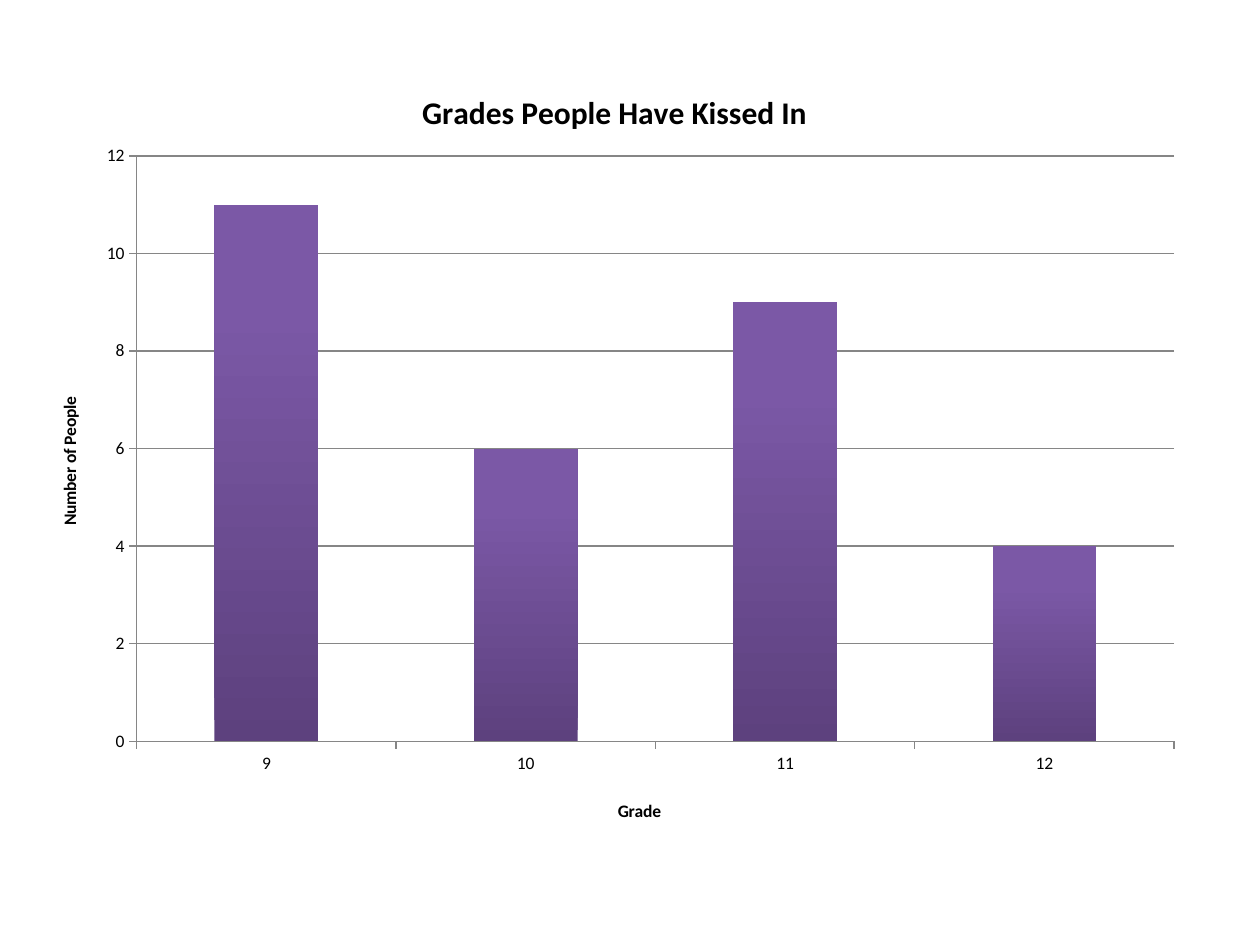
from dataclasses import dataclass
from typing import Any

import lxml.etree
import pptx
import pptx.chart.data
import pptx.dml.color
import pptx.enum.chart
import pptx.oxml.ns
import pptx.util

FONT = "Calibri"
BLACK = "000000"
GREY = "868686"


@dataclass
class Label:
    host: Any
    text: str
    size: int
    x: float
    y: float


def color(code: str) -> pptx.dml.color.RGBColor:
    return pptx.dml.color.RGBColor.from_string(code)


def style(font: Any, size: int, bold: bool = False, code: str = BLACK) -> None:
    font.name = FONT
    font.size = pptx.util.Pt(size)
    font.bold = bold
    font.color.rgb = color(code)


def write(frame: Any, text: str, **form: Any) -> None:
    run = frame.paragraphs[0].add_run()
    run.text = text
    style(run.font, **form)


def place(node: Any, index: int, **spots: Any) -> None:
    qn = pptx.oxml.ns.qn
    for old in node.findall(qn("c:layout")):
        node.remove(old)
    layout = lxml.etree.Element(qn("c:layout"))
    manual = lxml.etree.SubElement(layout, qn("c:manualLayout"))
    for key, value in spots.items():
        lxml.etree.SubElement(manual, qn(f"c:{key}")).set("val", str(value))
    node.insert(index, layout)


def draw_label(label: Label) -> None:
    title = getattr(label.host, "chart_title", None) or label.host.axis_title
    write(title.text_frame, label.text, size=label.size, bold=True)
    place(title._element, 1, xMode="edge", yMode="edge", x=label.x, y=label.y)


def draw_line(line: Any) -> None:
    line.color.rgb = color(GREY)
    line.width = pptx.util.Pt(0.75)


def draw_axis(axis: Any) -> None:
    axis.major_tick_mark = pptx.enum.chart.XL_TICK_MARK.OUTSIDE
    axis.minor_tick_mark = pptx.enum.chart.XL_TICK_MARK.NONE
    style(axis.tick_labels.font, 10)
    draw_line(axis.format.line)


def fill_bars(series: Any) -> None:
    fill = series.format.fill
    fill.gradient()
    fill.gradient_angle = 90
    shades = ((0, "5D417E"), (0.8, "7B58A6"))
    for stop, (spot, code) in zip(fill.gradient_stops, shades):
        stop.position = spot
        stop.color.rgb = color(code)


def add_graph(slide: Any) -> None:
    data = pptx.chart.data.CategoryChartData()
    data.categories = ["9", "10", "11", "12"]
    data.add_series("Series 1", (11, 6, 9, 4))
    box = [pptx.util.Cm(n) for n in (0.64, 1.07, 23.5, 15.95)]
    kind = pptx.enum.chart.XL_CHART_TYPE.COLUMN_CLUSTERED
    chart = slide.shapes.add_chart(kind, *box, data).chart
    style(chart.font, 10)
    chart.has_legend = False
    plot = chart.plots[0]
    plot.gap_width = 150
    plot.vary_by_categories = False
    fill_bars(plot.series[0])

    grades, people = chart.category_axis, chart.value_axis
    for axis in (grades, people):
        draw_axis(axis)
    people.minimum_scale, people.maximum_scale, people.major_unit = 0, 12, 2
    people.has_major_gridlines = True
    draw_line(people.major_gridlines.format.line)

    for label in (
        Label(chart, "Grades People Have Kissed In", 18, 0.33, 0.04),
        Label(grades, "Grade", 10, 0.5, 0.94),
        Label(people, "Number of People", 10, 0.02, 0.43),
    ):
        draw_label(label)
    place(plot._element.getparent(), 0, layoutTarget="inner", xMode="edge",
          yMode="edge", x=0.09, y=0.13, w=0.89, h=0.74)


def main() -> None:
    deck = pptx.Presentation()
    deck.slide_width = pptx.util.Cm(25.4)
    deck.slide_height = pptx.util.Cm(19.05)
    add_graph(deck.slides.add_slide(deck.slide_layouts[6]))
    deck.save("out.pptx")


if __name__ == "__main__":
    main()
